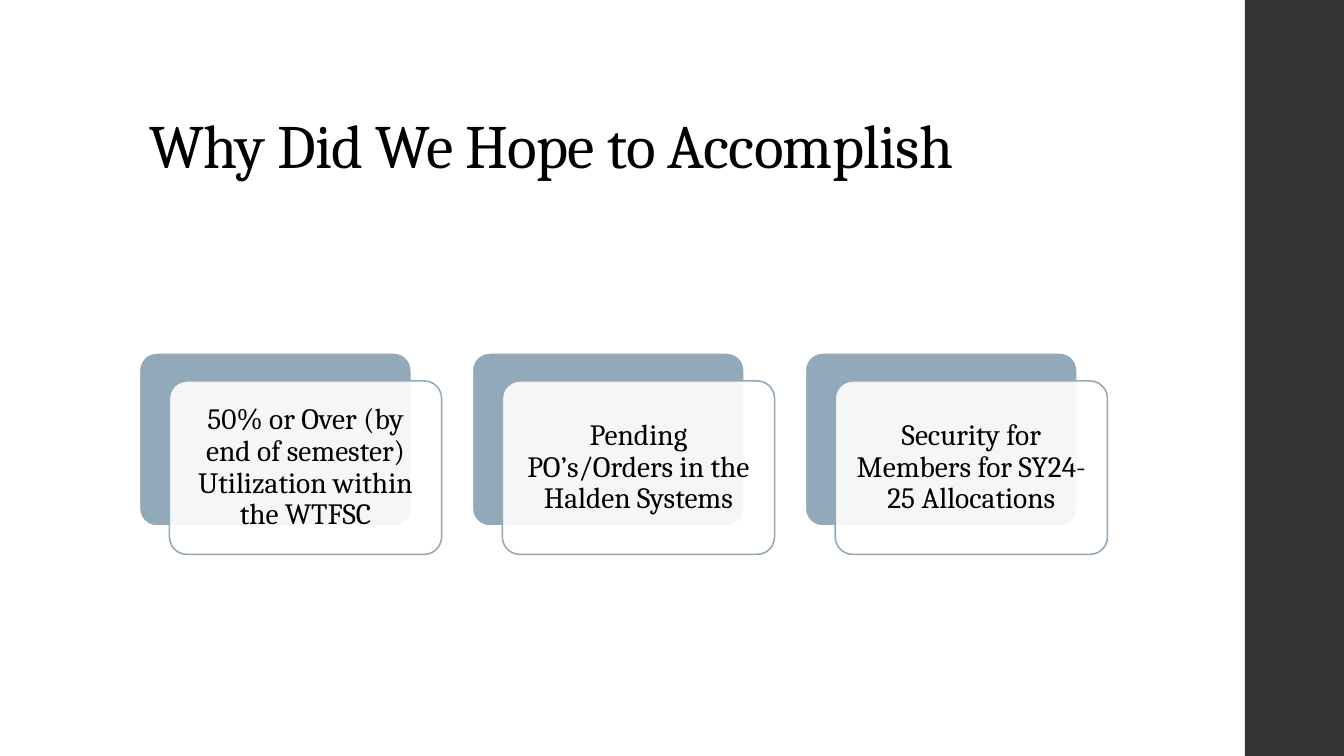
from pptx import Presentation
from pptx import util as u
from pptx.dml.color import RGBColor
from pptx.enum import shapes, text
from pptx.oxml import parse_xml
from pptx.oxml.ns import nsdecls

TITLE = "Why Did We Hope to Accomplish"
GOALS = [
    "50% or Over (by end of semester) Utilization within the WTFSC",
    "Pending PO’s/Orders in the Halden Systems",
    "Security for Members for SY24-25 Allocations",
]

FONT = "Cambria"
BLACK, WHITE, DARK, BLUE = "000000", "FFFFFF", "353537", "92A9B9"

# Lengths in centimetres
SLIDE_WIDTH, SLIDE_HEIGHT = 33.87, 19.05
BAR_LEFT = 31.37
LEFT, CARD_TOP = 3.51, 8.89
CARD_WIDTH, CARD_HEIGHT, CARD_STEP = 6.86, 4.37, 8.39
FRONT_RIGHT, FRONT_DOWN = 0.76, 0.71
CARD_INSET = 0.36


def rgb(color):
    return RGBColor.from_string(color)


def add_box(slide, kind, left, top, width, height, fill, line=None, line_width=1):
    shape = slide.shapes.add_shape(
        kind, u.Cm(left), u.Cm(top), u.Cm(width), u.Cm(height))
    shape.shadow.inherit = False
    shape.fill.solid()
    shape.fill.fore_color.rgb = rgb(fill)
    if line:
        shape.line.color.rgb = rgb(line)
        shape.line.width = u.Pt(line_width)
    else:
        shape.line.fill.background()
    return shape


def add_card_layer(slide, left, top, fill, line, line_width):
    shape = add_box(slide, shapes.MSO_SHAPE.ROUNDED_RECTANGLE, left, top,
                    CARD_WIDTH, CARD_HEIGHT, fill, line, line_width)
    shape.adjustments[0] = 0.1
    return shape


def set_opacity(shape, percent):
    color = shape.fill._xPr.solidFill[0]
    color.append(parse_xml(f'<a:alpha {nsdecls("a")} val="{percent * 1000}"/>'))


def write(shape, content, size, alignment, anchor):
    frame = shape.text_frame
    frame.word_wrap = True
    frame.auto_size = text.MSO_AUTO_SIZE.NONE
    frame.vertical_anchor = anchor
    paragraph = frame.paragraphs[0]
    paragraph.alignment = alignment
    paragraph.line_spacing = 0.9
    run = paragraph.add_run()
    run.text = content
    run.font.name = FONT
    run.font.size = u.Pt(size)
    run.font.color.rgb = rgb(BLACK)
    return run


def add_title(slide):
    title = slide.shapes.title
    title.left, title.top = u.Cm(LEFT), u.Cm(1.02)
    title.width, title.height = u.Cm(26.92), u.Cm(3.68)
    run = write(title, TITLE, 44, text.PP_ALIGN.LEFT, text.MSO_ANCHOR.BOTTOM)
    run.font._element.set("spc", "-50")


def add_goal(slide, left, goal):
    add_card_layer(slide, left, CARD_TOP, BLUE, WHITE, 1.35)
    front = add_card_layer(slide, left + FRONT_RIGHT, CARD_TOP + FRONT_DOWN,
                           WHITE, BLUE, 1.1)
    set_opacity(front, 90)
    frame = front.text_frame
    frame.margin_left = frame.margin_right = u.Cm(CARD_INSET)
    frame.margin_top = frame.margin_bottom = u.Cm(CARD_INSET)
    write(front, goal, 21, text.PP_ALIGN.CENTER, text.MSO_ANCHOR.MIDDLE)


def main():
    presentation = Presentation()
    presentation.slide_width = u.Cm(SLIDE_WIDTH)
    presentation.slide_height = u.Cm(SLIDE_HEIGHT)
    title_only = presentation.slide_layouts.get_by_name("Title Only")
    slide = presentation.slides.add_slide(title_only)

    add_box(slide, shapes.MSO_SHAPE.RECTANGLE, BAR_LEFT, 0,
            SLIDE_WIDTH - BAR_LEFT, SLIDE_HEIGHT, DARK)
    add_title(slide)
    for index, goal in enumerate(GOALS):
        add_goal(slide, LEFT + index * CARD_STEP, goal)

    presentation.save("out.pptx")


if __name__ == "__main__":
    main()
